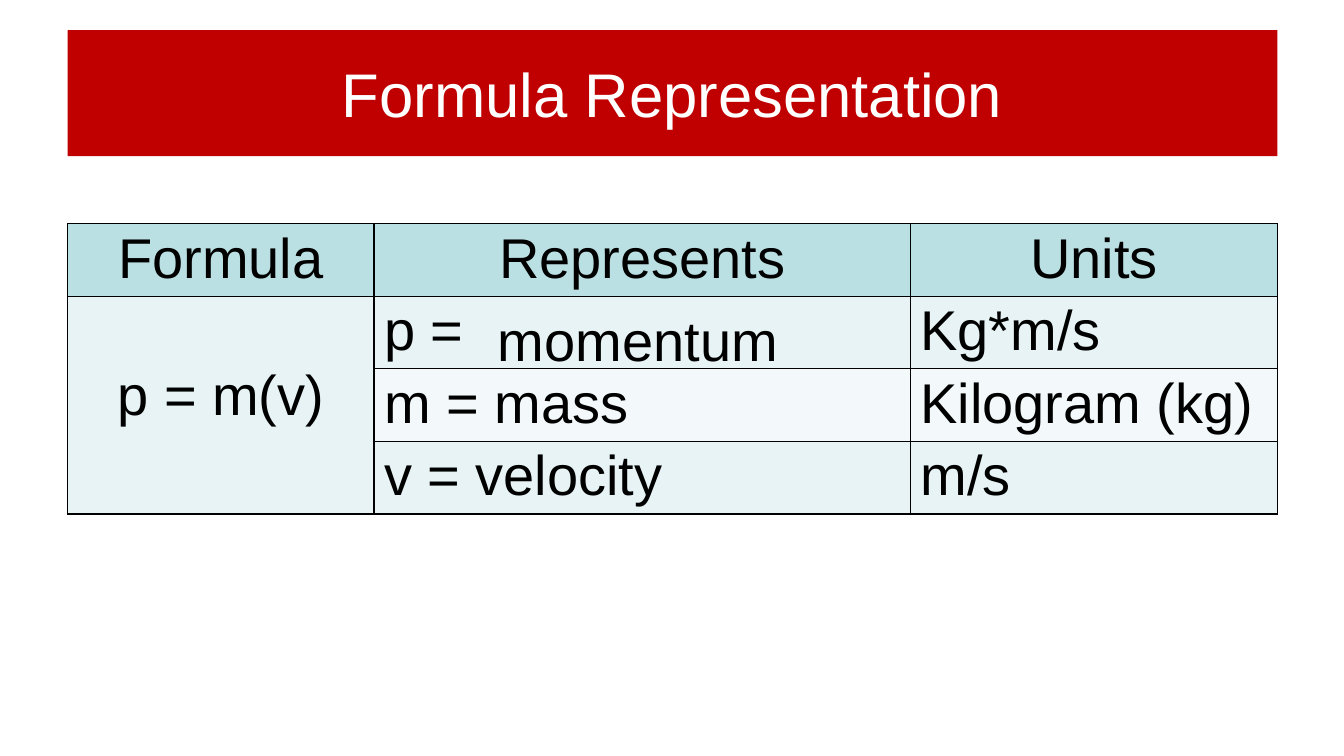
from dataclasses import dataclass
from lxml.etree import SubElement as Sub
from pptx import Presentation
from pptx.dml.color import RGBColor as Rgb
from pptx.enum.shapes import MSO_SHAPE as Shape
from pptx.enum.text import MSO_ANCHOR as Anchor, PP_ALIGN as Align
from pptx.oxml.ns import qn
from pptx.util import Pt

TITLE = "Formula Representation"
ANSWER = "momentum"
ROWS = [
    ("Formula", "Represents", "Units"),
    ("p = m(v)", "p =", "Kg*m/s"),
    ("", "m = mass", "Kilogram (kg)"),
    ("", "v = velocity", "m/s"),
]
COLS = [304, 532, 364]
ROW = 72
PAD = 4
LIFT = 18
BANNER = (67, 30, 1200, 125)
GRID = (67, 222, sum(COLS), ROW * len(ROWS))
NOTE = (484, 298, 399, 77)


@dataclass
class Theme:
    font: str = "Arial"
    title: int = 44
    body: int = 40
    line: int = 1
    ink: str = "000000"
    white: str = "FFFFFF"
    red: str = "C00000"
    head: str = "BBE0E3"
    bands: tuple = ("F3F9FA", "E7F3F4")


theme = Theme()


def px(n):
    return n * 9144


def box(spot):
    return [px(n) for n in spot]


def write(frame, text, size, color, align):
    para = frame.paragraphs[0]
    para.text = text
    para.alignment = align
    for run in para.runs:
        run.font.name = theme.font
        run.font.size = Pt(size)
        run.font.color.rgb = Rgb.from_string(color)


def paint(fill, color):
    fill.solid()
    fill.fore_color.rgb = Rgb.from_string(color)


def edge(cell):
    props = cell._tc.get_or_add_tcPr()
    for side in ("lnL", "lnR", "lnT", "lnB"):
        line = Sub(props, qn(f"a:{side}"), w=str(Pt(theme.line)))
        solid = Sub(line, qn("a:solidFill"))
        Sub(solid, qn("a:srgbClr"), val=theme.ink)


def add_title(slide):
    bar = slide.shapes.add_shape(Shape.RECTANGLE, *box(BANNER))
    bar.shadow.inherit = False
    paint(bar.fill, theme.red)
    bar.line.fill.background()
    bar.text_frame.word_wrap = True
    bar.text_frame.vertical_anchor = Anchor.MIDDLE
    write(bar.text_frame, TITLE, theme.title, theme.white, Align.CENTER)


def add_grid(slide):
    table = slide.shapes.add_table(len(ROWS), len(COLS), *box(GRID)).table
    for col, width in zip(table.columns, COLS):
        col.width = px(width)
    for r, row in enumerate(ROWS):
        table.rows[r].height = px(ROW)
        for c, text in enumerate(row):
            cell = table.cell(r, c)
            cell.margin_top = cell.margin_bottom = px(PAD)
            edge(cell)
            paint(cell.fill, theme.bands[r % 2] if r else theme.head)
            align = Align.LEFT if r and c else Align.CENTER
            write(cell.text_frame, text, theme.body, theme.ink, align)
    rule = table.cell(1, 0)
    rule.merge(table.cell(len(ROWS) - 1, 0))
    rule.vertical_anchor = Anchor.MIDDLE
    rule.margin_bottom = px(PAD + LIFT)


def add_note(slide):
    note = slide.shapes.add_textbox(*box(NOTE))
    note.text_frame.word_wrap = True
    write(note.text_frame, ANSWER, theme.body, theme.ink, Align.LEFT)


def main():
    deck = Presentation()
    deck.slide_width, deck.slide_height = box((1333, 750))
    slide = deck.slides.add_slide(deck.slide_layouts[6])
    add_title(slide)
    add_grid(slide)
    add_note(slide)
    deck.save("out.pptx")


if __name__ == "__main__":
    main()
